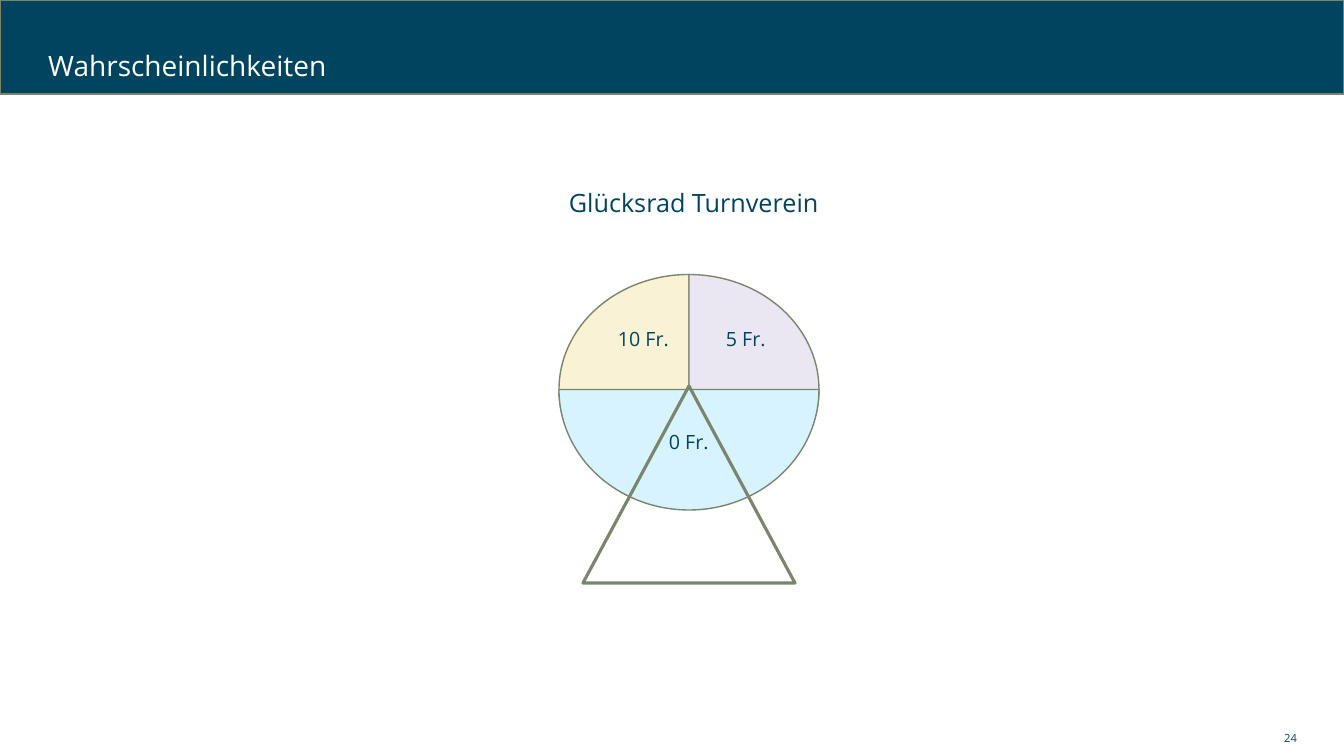
from pptx import Presentation
from pptx.dml.color import RGBColor
from pptx.enum.shapes import MSO_SHAPE
from pptx.enum.text import MSO_ANCHOR, MSO_AUTO_SIZE, PP_ALIGN
from pptx.util import Emu, Pt

RECTANGLE, PIE, TRIANGLE = MSO_SHAPE.RECTANGLE, MSO_SHAPE.PIE, MSO_SHAPE.ISOSCELES_TRIANGLE
MIDDLE, TOP = MSO_ANCHOR.MIDDLE, MSO_ANCHOR.TOP
LEFT, RIGHT = PP_ALIGN.LEFT, PP_ALIGN.RIGHT
FIT_SHAPE, NO_FIT = MSO_AUTO_SIZE.SHAPE_TO_FIT_TEXT, MSO_AUTO_SIZE.NONE
TITLE_ONLY = 5
SLIDE_WIDTH, SLIDE_HEIGHT = 1344, 756
EMU_PER_PX = 12192000 / SLIDE_WIDTH
HALF_TURN = 108
FONT = "Open Sans"
COLORS = {
    "navy": "004460",
    "olive": "7A866C",
    "white": "FFFFFF",
    "cream": "FAF2D4",
    "lilac": "EBE7F2",
    "sky": "D6F3FF",
}


def px(length):
    """Turn pixels into EMU."""
    return Emu(round(length * EMU_PER_PX))


def color(name):
    """Look up a colour of the slide."""
    return RGBColor.from_string(COLORS[name])


def add_figure(slide, kind, box, fill=None, line_width=1):
    """Add an outlined preset shape, filled if a colour is given."""
    shape = slide.shapes.add_shape(kind, *map(px, box))
    shape.shadow.inherit = False
    if fill:
        shape.fill.solid()
        shape.fill.fore_color.rgb = color(fill)
    else:
        shape.fill.background()
    shape.line.color.rgb = color("olive")
    shape.line.width = Pt(line_width)
    return shape


def write(shape, text, size, ink="navy", align=LEFT, anchor=TOP):
    """Set one formatted paragraph in a shape."""
    frame = shape.text_frame
    frame.text = text
    frame.vertical_anchor = anchor
    paragraph = frame.paragraphs[0]
    paragraph.alignment = align
    font = paragraph.runs[0].font
    font.name = FONT
    font.size = Pt(size)
    font.color.rgb = color(ink)
    return paragraph


def add_label(slide, text, box, size):
    """Add an unwrapped label that fits its text."""
    label = slide.shapes.add_textbox(*map(px, box))
    label.text_frame.word_wrap = False
    label.text_frame.auto_size = FIT_SHAPE
    write(label, text, size)


def build_header(slide, left, top, width, height):
    """Fill the title and put the coloured bar behind it."""
    bar = add_figure(slide, RECTANGLE, (left, top, width, height), "navy")
    title = slide.shapes.title
    title.element.addprevious(bar.element)
    title.left, title.top = px(left + 38), px(top + 40)
    title.width, title.height = px(1189), px(height - 40)
    title.text_frame.auto_size = NO_FIT
    paragraph = write(title, "Wahrscheinlichkeiten", 20, "white", anchor=MIDDLE)
    paragraph.line_spacing = 0.9


def build_wheel(slide, left, top, width, height):
    """Draw the wheel of fortune with its prizes, stand and heading."""
    center_x, center_y = left + width / 2, top + height / 2
    upright, turned = (width, height), (230, width)
    halves = [("cream", 90, turned), ("lilac", 270, turned), ("sky", 0, upright)]
    for fill, rotation, (half_width, half_height) in halves:
        box = (center_x - half_width / 2, center_y - half_height / 2, half_width, half_height)
        half = add_figure(slide, PIE, box, fill)
        half.adjustments[0] = 0
        half.adjustments[1] = HALF_TURN
        half.rotation = rotation
    prizes = [("0 Fr.", 100, 156, 60), ("5 Fr.", 157, 53, 60), ("10 Fr.", 49, 53, 72)]
    for text, x, y, label_width in prizes:
        add_label(slide, text, (left + x, top + y, label_width, 34), 14)
    add_figure(slide, TRIANGLE, (center_x - 106, top + 117, 212, 197), line_width=2.25)
    add_label(slide, "Glücksrad Turnverein", (left, top - 87, 272, 40), 18)


def build_page_number(slide, left, top, width, height):
    """Write the page number at the right of its box."""
    number = slide.shapes.add_textbox(*map(px, (left, top, width, height)))
    number.text_frame.word_wrap = True
    write(number, "24", 8, align=RIGHT, anchor=MIDDLE)


def main():
    """Build and save the slide."""
    presentation = Presentation()
    presentation.slide_width = px(SLIDE_WIDTH)
    presentation.slide_height = px(SLIDE_HEIGHT)
    slide = presentation.slides.add_slide(presentation.slide_layouts[TITLE_ONLY])
    build_header(slide, 0, 0, SLIDE_WIDTH, 94)
    build_wheel(slide, 559, 269, 260, 241)
    build_page_number(slide, 950, 726, 357, 24)
    presentation.save("out.pptx")


if __name__ == "__main__":
    main()
